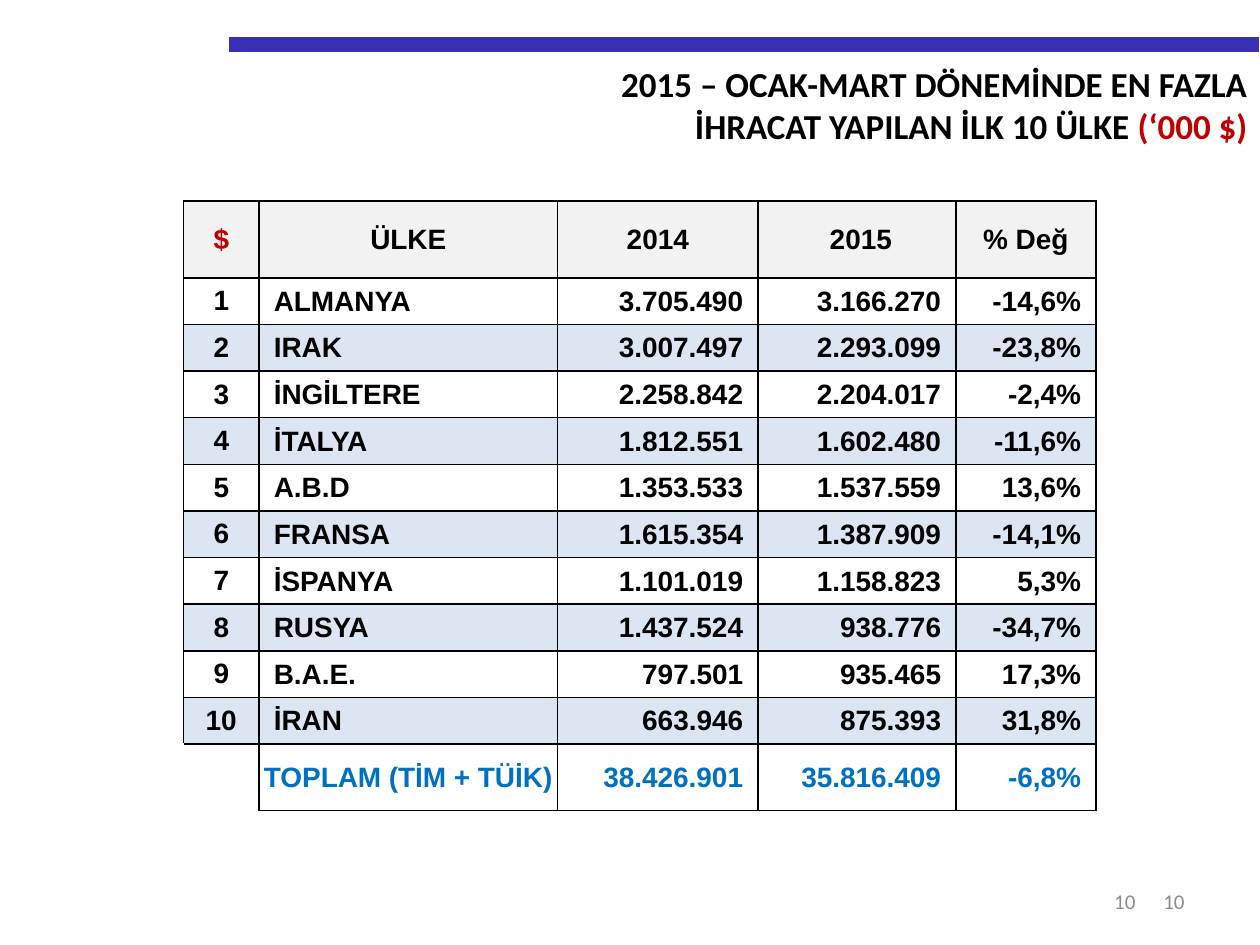
from dataclasses import dataclass

from lxml import etree
from pptx import Presentation, util as u
from pptx.dml.color import RGBColor
from pptx.enum import shapes, text
from pptx.oxml import ns

Cm, Pt = u.Cm, u.Pt
LEFT, MID, RIGHT = text.PP_ALIGN.LEFT, text.PP_ALIGN.CENTER, text.PP_ALIGN.RIGHT


@dataclass(frozen=True)
class Theme:
    ink: str = "000000"
    red: str = "C00000"
    blue: str = "0070C0"
    bar: str = "382EB8"
    gray: str = "8C8C8C"
    head: str = "F2F2F2"
    band: str = "DCE6F2"
    sans: str = "Calibri"
    grid: str = "Arial"
    title: int = 20
    body: int = 16
    note: int = 12


T = Theme()
HEAD = ("$", "ÜLKE", "2014", " 2015", "% Değ")
LANDS = (
    ("ALMANYA", "3.705.490", "3.166.270", "-14,6%"),
    ("IRAK", "3.007.497", "2.293.099", "-23,8%"),
    ("İNGİLTERE", "2.258.842", "2.204.017", "-2,4%"),
    ("İTALYA", "1.812.551", "1.602.480", "-11,6%"),
    ("A.B.D", "1.353.533", "1.537.559", "13,6%"),
    ("FRANSA", "1.615.354", "1.387.909", "-14,1%"),
    ("İSPANYA", "1.101.019", "1.158.823", "5,3%"),
    ("RUSYA", "1.437.524", "938.776", "-34,7%"),
    ("B.A.E.", "797.501", "935.465", "17,3%"),
    ("İRAN", "663.946", "875.393", "31,8%"),
)
TOTAL = ("", "TOPLAM (TİM + TÜİK)", "38.426.901", "35.816.409", "-6,8%")
COLS = (1.52, 6.02, 4.04, 3.99, 2.82)
TALL = (1.55, *[0.94] * len(LANDS), 1.34)


def style(run, face, size, color, bold=True):
    run.font.name, run.font.size, run.font.bold = face, Pt(size), bold
    run.font.color.rgb = RGBColor.from_string(color)


def add_bar(slide, x, y, w):
    bar = slide.shapes.add_connector(
        shapes.MSO_CONNECTOR.STRAIGHT, Cm(x), Cm(y), Cm(x + w), Cm(y))
    bar.line.color.rgb = RGBColor.from_string(T.bar)
    bar.line.width = Pt(8.5)
    etree.SubElement(bar._element.spPr, ns.qn("a:effectLst"))


def add_title(slide, x, y, w, h):
    frame = slide.shapes.add_textbox(Cm(x), Cm(y), Cm(w), Cm(h)).text_frame
    frame.word_wrap = True
    frame.text = "2015 – OCAK-MART DÖNEMİNDE EN FAZLA\nİHRACAT YAPILAN İLK 10 ÜLKE "
    frame.paragraphs[1].add_run().text = "(‘000 $)"
    for para in frame.paragraphs:
        para.alignment = RIGHT
        for run in para.runs:
            style(run, T.sans, T.title, T.ink)
    style(run, T.sans, T.title, T.red)


def add_page(slide, x, y, w, h):
    frame = slide.shapes.add_textbox(Cm(x), Cm(y), Cm(w), Cm(h)).text_frame
    frame.word_wrap = True
    frame.vertical_anchor = text.MSO_ANCHOR.MIDDLE
    frame.text = "10"
    para = frame.paragraphs[0]
    para.alignment = RIGHT
    style(para.runs[0], T.sans, T.note, T.gray, False)


def edge(cell, sides):
    props = cell._tc.get_or_add_tcPr()
    for side in sides:
        line = etree.SubElement(props, ns.qn(f"a:ln{side}"), w=str(Pt(1)))
        fill = etree.SubElement(line, ns.qn("a:solidFill"))
        etree.SubElement(fill, ns.qn("a:srgbClr"), val=T.ink)


def fill_cell(cell, words, align, pads, color, back):
    edge(cell, "LRTB" if words else "RT")
    if back:
        cell.fill.solid()
        cell.fill.fore_color.rgb = RGBColor.from_string(back)
    else:
        cell.fill.background()
    if not words:
        return
    cell.vertical_anchor = text.MSO_ANCHOR.MIDDLE
    (cell.margin_left, cell.margin_top,
     cell.margin_right, cell.margin_bottom) = map(Cm, pads)
    cell.text_frame.text = words
    para = cell.text_frame.paragraphs[0]
    para.alignment = align
    style(para.runs[0], T.grid, T.body, color)


def add_grid(slide, x, y):
    rows = [HEAD, *[(str(n), *land) for n, land in enumerate(LANDS, 1)], TOTAL]
    last = len(rows) - 1
    grid = slide.shapes.add_table(
        len(rows), len(COLS), Cm(x), Cm(y), Cm(sum(COLS)), Cm(sum(TALL))).table
    grid.first_row = grid.horz_banding = False
    for col, wide in zip(grid.columns, COLS):
        col.width = Cm(wide)
    for row, tall in zip(grid.rows, TALL):
        row.height = Cm(tall)
    for r, row in enumerate(rows):
        # Shade the header and every second country
        back = T.head if r == 0 else T.band if r % 2 == 0 else None
        for c, words in enumerate(row):
            color = T.blue if r == last else T.red if r + c == 0 else T.ink
            if r == 0 or c == 0:
                align, pads = MID, (0.25, 0.13, 0.25, 0.13)
            elif c == 1:
                align, pads = LEFT, (0.1 if r == last else 0.3, 0.02, 0.02, 0)
            else:
                align, pads = RIGHT, (0.02, 0.02, 0.3, 0)
            fill_cell(grid.cell(r, c), words, align, pads, color, back)


def main():
    deck = Presentation()
    deck.slide_width, deck.slide_height = Cm(25.4), Cm(19.05)
    slide = deck.slides.add_slide(deck.slide_layouts[6])
    # Heading
    add_bar(slide, 4.62, 0.89, 20.76)
    add_title(slide, 2.69, 1.14, 22.71, 1.96)
    # Countries
    add_grid(slide, 3.7, 4.05)
    # Page numbers
    for x, w in ((18.21, 5.92), (17.81, 5.33)):
        add_page(slide, x, 17.65, w, 1.02)
    deck.save("out.pptx")


if __name__ == "__main__":
    main()
